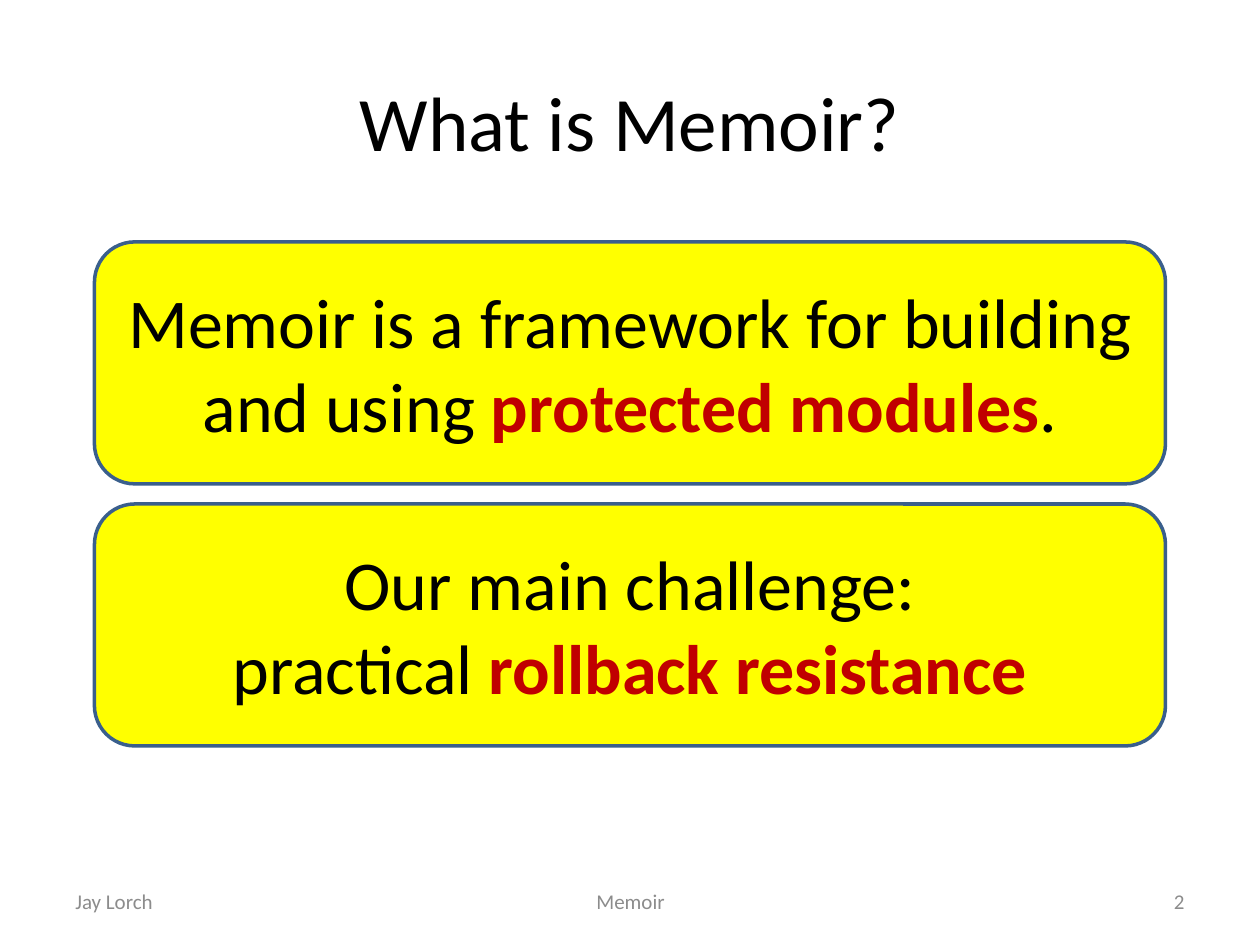
from pptx import Presentation
from pptx.dml.color import RGBColor as RGB
from pptx.enum.shapes import MSO_SHAPE as Kind
from pptx.enum.text import MSO_ANCHOR as Anchor, PP_ALIGN as Align
from pptx.util import Inches, Pt


def hue(code):
    return RGB.from_string(code)


def style(para, size, code, align):
    para.alignment = align
    para.font.name = "Calibri"
    para.font.size = Pt(size)
    para.font.color.rgb = hue(code)


deck = Presentation()
deck.slide_width, deck.slide_height = Inches(10), Inches(7.5)
slide = deck.slides.add_slide(deck.slide_layouts[5])

title = slide.shapes.title
title.left, title.top = Inches(0.5), Inches(0.33)
title.width, title.height = Inches(9), Inches(1.25)
title.text_frame.text = "What is Memoir?"
title.text_frame.vertical_anchor = Anchor.MIDDLE
style(title.text_frame.paragraphs[0], 44, "000000", Align.CENTER)

cards = [
    (1.92, [[("Memoir is a framework for building and using ", False),
             ("protected modules", True), (".", False)]]),
    (4, [[("Our main challenge:", False)],
         [("practical ", False), ("rollback resistance", True)]]),
]
for top, lines in cards:
    card = slide.shapes.add_shape(
        Kind.ROUNDED_RECTANGLE, Inches(0.75), Inches(top), Inches(8.5), Inches(1.92))
    card.shadow.inherit = False
    card.fill.solid()
    card.fill.fore_color.rgb = hue("FFFF00")
    card.line.color.rgb = hue("3A5F8C")
    card.line.width = Pt(2)
    frame = card.text_frame
    frame.word_wrap = True
    frame.vertical_anchor = Anchor.MIDDLE
    for i, line in enumerate(lines):
        para = frame.add_paragraph() if i else frame.paragraphs[0]
        style(para, 40, "000000", Align.CENTER)
        for words, key in line:
            run = para.add_run()
            run.text = words
            run.font.name = "Calibri"
            run.font.size = Pt(40)
            run.font.bold = key
            run.font.color.rgb = hue("C00000" if key else "000000")

feet = [
    (0.5, 2.33, "Jay Lorch", Align.LEFT),
    (3.42, 3.17, "Memoir", Align.CENTER),
    (7.17, 2.33, "2", Align.RIGHT),
]
for left, width, words, align in feet:
    foot = slide.shapes.add_textbox(Inches(left), Inches(6.95), Inches(width), Inches(0.4))
    frame = foot.text_frame
    frame.word_wrap = True
    frame.vertical_anchor = Anchor.MIDDLE
    frame.text = words
    style(frame.paragraphs[0], 12, "8C8C8C", align)

deck.save("out.pptx")
